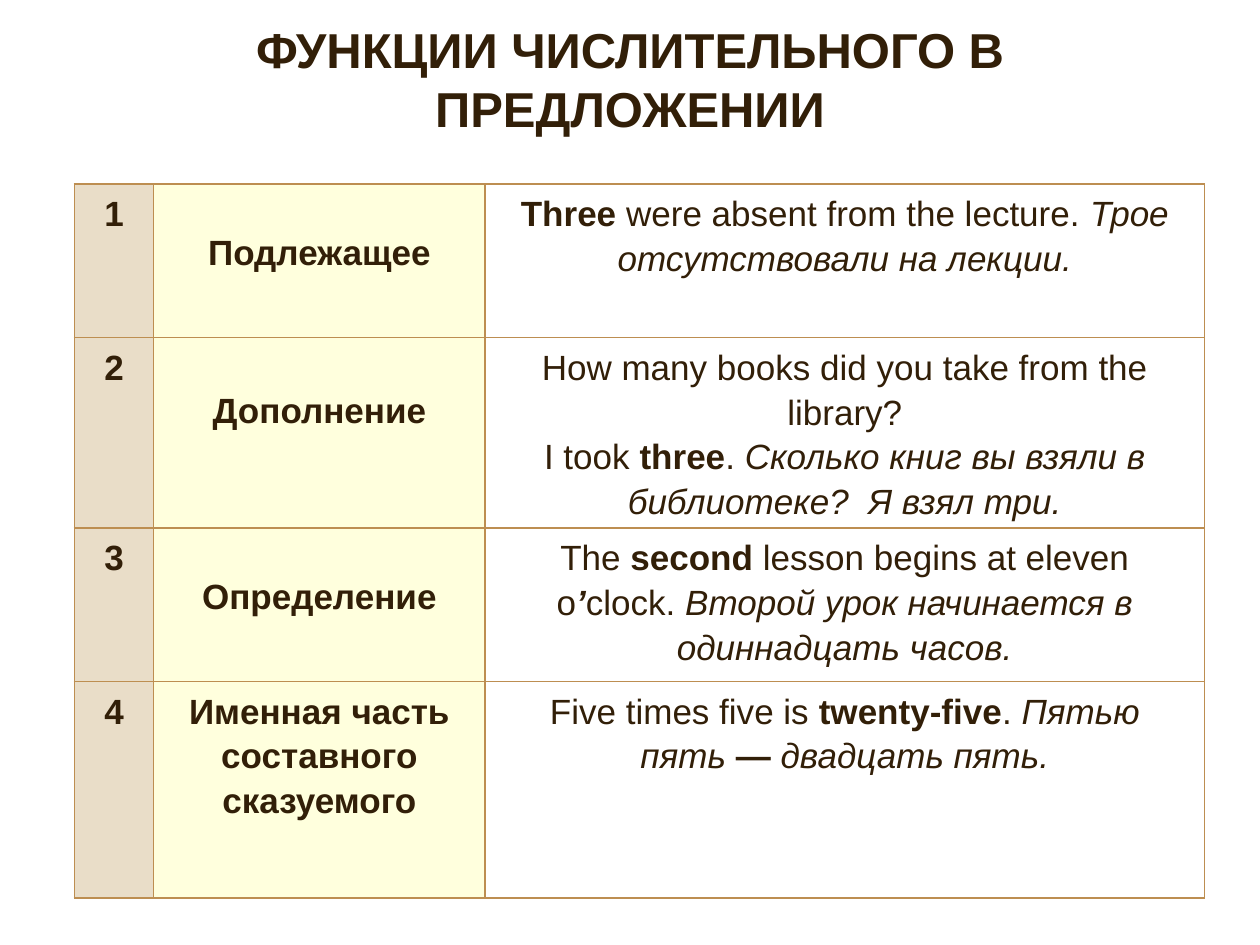
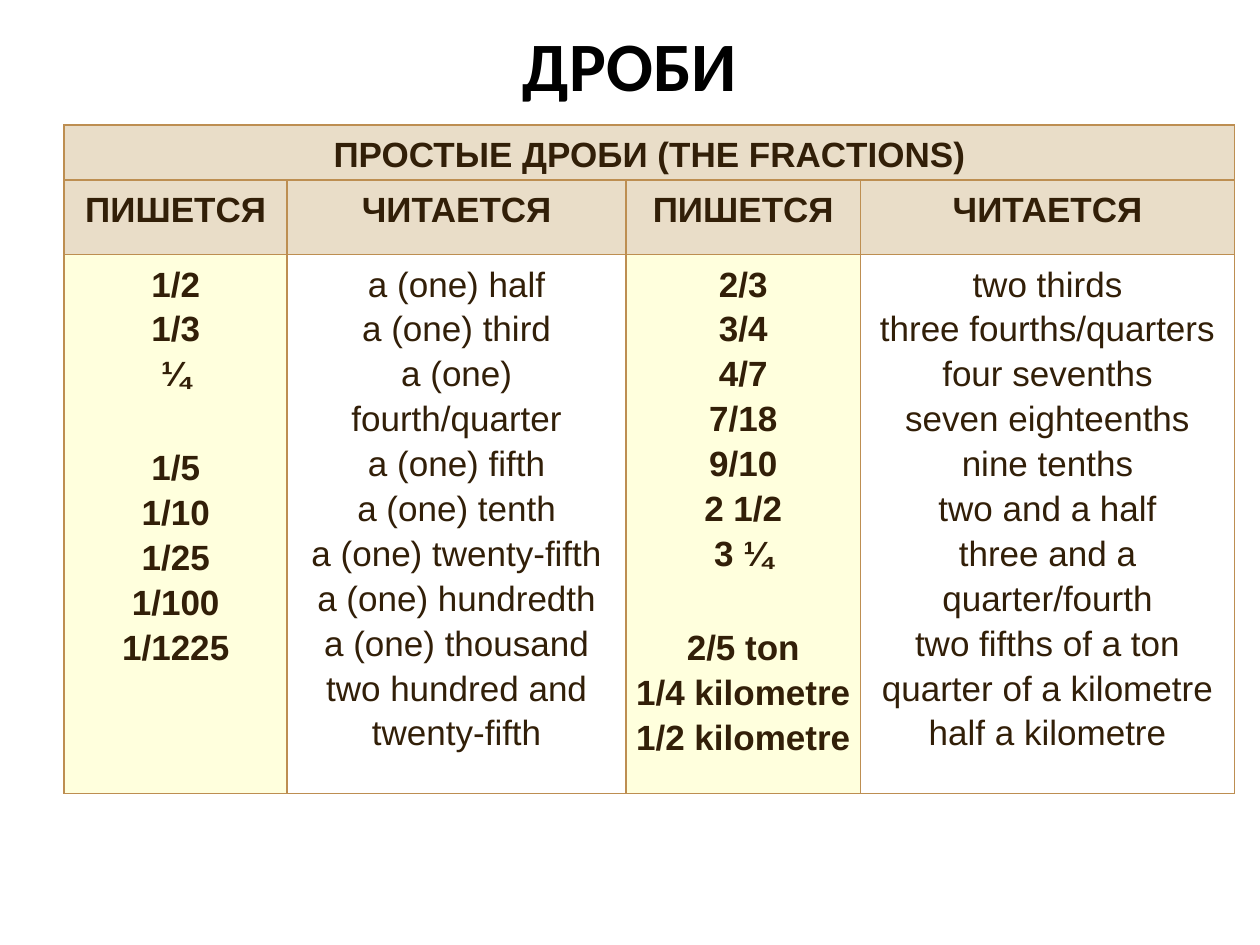
from pptx import Presentation
from pptx.dml.color import RGBColor
from pptx.enum.text import MSO_ANCHOR, MSO_AUTO_SIZE, PP_ALIGN
from pptx.oxml import parse_xml
from pptx.oxml.ns import nsdecls
from pptx.util import Inches, Pt

# Shared look
INK, BLACK, BORDER = "321F08", "000000", "BD8E51"
SAND, CREAM, WHITE = "E9DDC8", "FFFFDD", "FFFFFF"
INSET = 0.04
NBSP = chr(160)  # written as ~ in the texts below

FUNCTIONS = [
    # label lines, drop of the label, paragraphs of (text, style) runs
    (["Подлежащее"], 0.31, [
        [("Three", "b"), ("~were absent from the leсture.~", ""),
         ("Трое отсутствовали на лекции.", "i")]]),
    (["Дополнение"], 0.34, [
        [("How many books did you take from the library?", "")],
        [("I took~", ""), ("three", "b"), (".~", ""),
         ("Сколько книг вы взяли в библиотеке?~ Я взял три.", "i")]]),
    (["Определение"], 0.31, [
        [("The", ""), ("~second", "b"), ("~lesson begins at eleven o", ""),
         ("’", "bi"), ("clock.~", ""),
         ("Второй урок начинается в одиннадцать часов.", "i")]]),
    (["Именная часть", "составного", "сказуемого"], 0, [
        [("Five times five is", ""), ("~twenty-five", "b"), (".~", ""),
         ("Пятью пять~", "i"), ("—~", "b"), ("двадцать пять.", "i")]]),
]

# Columns of fractions: lines, and the line that follows a wrapped reading
FRACTIONS = [
    (["1/2", "1/3", "¼", "1/5", "1/10", "1/25", "1/100", "1/1225"], "1/5"),
    (["a (one) half", "a (one) third", "a (one) fourth/quarter",
      "a (one) fifth", "a (one) tenth", "a (one) twenty-fifth",
      "a (one) hundredth", "a (one) thousand two hundred and",
      "twenty-fifth"], None),
    (["2/3", "3/4", "4/7", "7/18", "9/10", "2 1/2", "3 ¼", "2/5 ton",
      "1/4 kilometre", "1/2 kilometre"], "2/5 ton"),
    (["two thirds", "three fourths/quarters", "four sevenths",
      "seven eighteenths", "nine tenths", "two and a half",
      "three and a quarter/fourth", "two fifths of a ton",
      "quarter of a kilometre", "half a kilometre"], None),
]


def rgb(color):
    return RGBColor.from_string(color)


def set_font(font, size, color=INK, name="Arial"):
    font.size, font.name = Pt(size), name
    font.color.rgb = rgb(color)


def add_title_slide(prs, text, box, size, color=INK, name="Arial"):
    s = prs.slides.add_slide(prs.slide_layouts[5])
    title = s.shapes.title
    title.left, title.top, title.width, title.height = map(Inches, box)
    tf = title.text_frame
    tf.text = text
    tf.auto_size = MSO_AUTO_SIZE.NONE
    tf.vertical_anchor = MSO_ANCHOR.MIDDLE
    p = tf.paragraphs[0]
    p.alignment = PP_ALIGN.CENTER
    set_font(p.font, size, color, name)
    p.font.bold = True
    return s


def add_grid(s, left, top, widths, heights):
    """Add an unstyled table whose size follows from its columns and rows."""
    box = map(Inches, (left, top, sum(widths), sum(heights)))
    table = s.shapes.add_table(len(heights), len(widths), *box).table
    table.first_row = table.horz_banding = False
    for col, width in zip(table.columns, widths):
        col.width = Inches(width)
    for row, height in zip(table.rows, heights):
        row.height = Inches(height)
    for cell in table.iter_cells():
        add_borders(cell)
    return table


def add_borders(cell):
    tcPr = cell._tc.get_or_add_tcPr()
    for side in ("lnL", "lnR", "lnT", "lnB"):
        tcPr.append(parse_xml(
            f'<a:{side} {nsdecls("a")} w="{Pt(1)}"><a:solidFill>'
            f'<a:srgbClr val="{BORDER}"/></a:solidFill></a:{side}>'))


def fill_cell(cell, paragraphs, fill, drop=0):
    """Write paragraphs, each a list of (text, style) runs, into a cell."""
    cell.fill.solid()
    cell.fill.fore_color.rgb = rgb(fill)
    cell.margin_left = cell.margin_right = cell.margin_bottom = Inches(INSET)
    cell.margin_top = Inches(INSET + drop)
    tf = cell.text_frame
    for i, runs in enumerate(paragraphs):
        p = tf.add_paragraph() if i else tf.paragraphs[0]
        p.alignment, p.line_spacing = PP_ALIGN.CENTER, 1.15
        set_font(p.font, 20)
        for text, style in runs:
            r = p.add_run()
            r.text = text.replace("~", NBSP)
            set_font(r.font, 20)
            r.font.bold, r.font.italic = "b" in style, "i" in style


def lines(texts, style="b"):
    return [[(text, style)] for text in texts]


def build_functions(prs):
    s = add_title_slide(prs, "ФУНКЦИИ ЧИСЛИТЕЛЬНОГО В ПРЕДЛОЖЕНИИ",
                        (0.5, 0.15, 9, 0.95), 28)
    table = add_grid(s, 0.59, 1.46, [0.63, 2.63, 5.71],
                     [1.22, 1.51, 1.22, 1.72])
    for i, (label, drop, example) in enumerate(FUNCTIONS):
        fill_cell(table.cell(i, 0), lines([str(i + 1)]), SAND)
        fill_cell(table.cell(i, 1), lines(label), CREAM, drop)
        fill_cell(table.cell(i, 2), example, WHITE)


def build_fractions(prs):
    s = add_title_slide(prs, "ДРОБИ", (0.5, 0.2, 9, 0.62), 39.6,
                        BLACK, "Calibri")
    table = add_grid(s, 0.51, 0.99, [1.77, 2.69, 1.86, 2.97],
                     [0.44, 0.59, 4.28])
    # Heading across all columns
    table.cell(0, 0).merge(table.cell(0, 3))
    fill_cell(table.cell(0, 0), lines(["ПРОСТЫЕ ДРОБИ (THE FRACTIONS)"]), SAND)
    # Written and read forms alternate
    for i, (texts, after_gap) in enumerate(FRACTIONS):
        heading, style, fill = (("ЧИТАЕТСЯ", "", WHITE) if i % 2
                                else ("ПИШЕТСЯ", "b", CREAM))
        fill_cell(table.cell(1, i), lines([heading]), SAND)
        cell = table.cell(2, i)
        fill_cell(cell, lines(texts, style), fill)
        for p in cell.text_frame.paragraphs:
            if p.text == after_gap:
                p.space_before = Pt(28)


def main():
    prs = Presentation()
    prs.slide_width, prs.slide_height = Inches(10), Inches(7.5)
    build_functions(prs)
    build_fractions(prs)
    prs.save("out.pptx")


if __name__ == "__main__":
    main()
